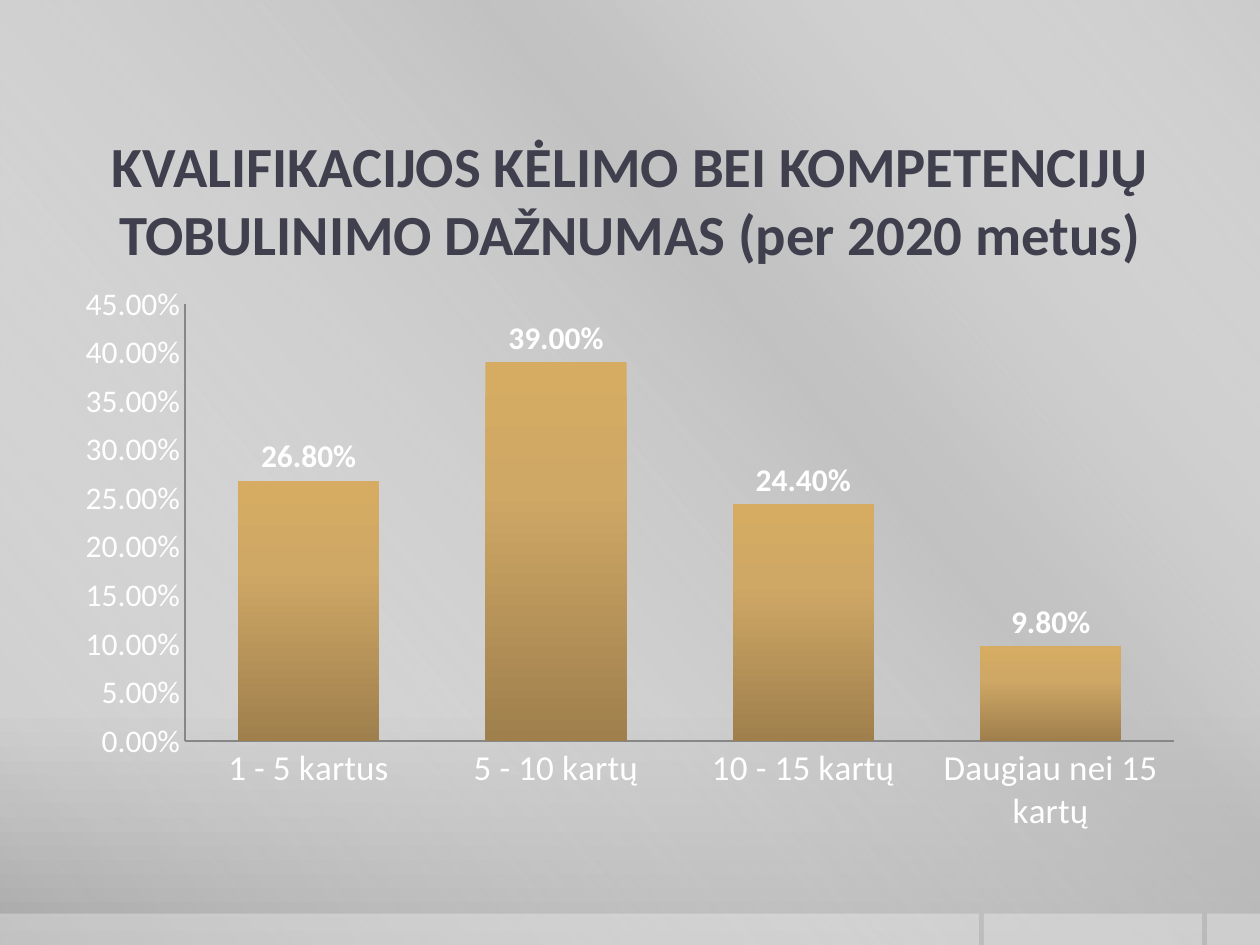
from lxml import etree
from pptx import Presentation
from pptx import util as u
from pptx.chart.data import CategoryChartData
from pptx.dml.color import RGBColor
from pptx.enum import chart as ch, shapes, text
from pptx.oxml.ns import qn

TITLE = "KVALIFIKACIJOS KĖLIMO BEI KOMPETENCIJŲ TOBULINIMO DAŽNUMAS (per 2020 metus)"
FREQUENCY = {
    "1 - 5 kartus": 0.268,
    "5 - 10 kartų": 0.39,
    "10 - 15 kartų": 0.244,
    "Daugiau nei 15 kartų": 0.098,
}
FONT = "Calibri"
PERCENT = "0.00%"

WHITE = RGBColor(0xFF, 0xFF, 0xFF)
SILVER = RGBColor(0xBF, 0xBF, 0xBF)
INK = RGBColor(0x3F, 0x3F, 0x4D)
AXIS = RGBColor(0x87, 0x87, 0x87)

# Gradient stops: position %, colour, opacity %
BACKDROP = [(0, RGBColor(0xCB, 0xCB, 0xCB), 100),
            (76, RGBColor(0xC8, 0xC8, 0xC8), 100),
            (100, RGBColor(0xA7, 0xA7, 0xA7), 100)]
SHEEN = [(0, WHITE, 0), (34, SILVER, 61), (38, SILVER, 76), (100, WHITE, 0)]
GOLD = [(0, RGBColor(0xD6, 0xAC, 0x62), 100),
        (34, RGBColor(0xCF, 0xA8, 0x66), 100),
        (100, RGBColor(0x9F, 0x7F, 0x4C), 100)]

WIDTH, HEIGHT = 10, 7.5
MARGIN = WIDTH / 20
CONTENT_WIDTH = WIDTH - 2 * MARGIN
FOOTER_TOP, FOOTER_GAP = 7.25, 0.04
FOOTER_WIDTHS = [7.77, 1.73, 0.42]


def add_color(parent, color, opacity):
    node = etree.SubElement(parent, qn("a:srgbClr"), val=str(color))
    if opacity < 100:
        etree.SubElement(node, qn("a:alpha"), val=str(opacity * 1000))


def paint_gradient(fill, owner, stops, angle):
    """Fill with stops; angle runs clockwise in degrees, owner holds the fill's XML."""
    fill.gradient()
    grad = next(owner.iter(qn("a:gradFill")))
    for child in list(grad):
        grad.remove(child)
    stop_list = etree.SubElement(grad, qn("a:gsLst"))
    for position, color, opacity in stops:
        stop = etree.SubElement(stop_list, qn("a:gs"), pos=str(position * 1000))
        add_color(stop, color, opacity)
    etree.SubElement(grad, qn("a:lin"), ang=str(angle * 60000), scaled="0")


def add_panel(slide, left, top, width, height):
    panel = slide.shapes.add_shape(shapes.MSO_SHAPE.RECTANGLE, u.Inches(left),
                                   u.Inches(top), u.Inches(width), u.Inches(height))
    panel.shadow.inherit = False
    panel.line.fill.background()
    return panel


def add_backdrop(slide):
    paint_gradient(slide.background.fill, slide.element, BACKDROP, 90)
    sheen = add_panel(slide, 0, 0, WIDTH, HEIGHT)
    paint_gradient(sheen.fill, sheen.element, SHEEN, 140)
    left = 0
    for width in FOOTER_WIDTHS:
        strip = add_panel(slide, left, FOOTER_TOP, width, HEIGHT - FOOTER_TOP)
        strip.fill.solid()
        solid = next(strip.element.iter(qn("a:solidFill")))
        add_color(solid, WHITE, 30)
        left += width + FOOTER_GAP


def add_title(slide):
    box = slide.shapes.add_textbox(u.Inches(MARGIN), u.Inches(1.08),
                                   u.Inches(CONTENT_WIDTH), u.Inches(1))
    frame = box.text_frame
    frame.word_wrap = True
    frame.vertical_anchor = text.MSO_ANCHOR.MIDDLE
    frame.margin_left = frame.margin_right = 0
    frame.text = TITLE
    heading = frame.paragraphs[0]
    heading.alignment = text.PP_ALIGN.CENTER
    style_font(heading.runs[0].font, 32.4, INK, True)


def style_font(font, size, color, bold=False):
    font.name, font.size, font.bold = FONT, u.Pt(size), bold
    font.color.rgb = color


def style_axis(axis, size):
    axis.has_major_gridlines = False
    axis.major_tick_mark = axis.minor_tick_mark = ch.XL_TICK_MARK.NONE
    axis.format.line.color.rgb = AXIS
    axis.format.line.width = u.Pt(0.75)
    style_font(axis.tick_labels.font, size, WHITE)


def add_frequency_chart(slide):
    data = CategoryChartData(number_format=PERCENT)
    data.categories = list(FREQUENCY)
    data.add_series("Series 1", FREQUENCY.values())
    chart = slide.shapes.add_chart(
        ch.XL_CHART_TYPE.COLUMN_CLUSTERED, u.Inches(MARGIN), u.Inches(2.17),
        u.Inches(CONTENT_WIDTH), u.Inches(4.53), data).chart
    chart.has_legend = chart.has_title = False
    style_font(chart.font, 18, WHITE)
    style_axis(chart.category_axis, 20)
    style_axis(chart.value_axis, 18)
    scale = chart.value_axis
    scale.minimum_scale, scale.maximum_scale, scale.major_unit = 0, 0.45, 0.05
    scale.tick_labels.number_format = PERCENT
    scale.tick_labels.number_format_is_linked = False

    plot = chart.plots[0]
    plot.gap_width = 75
    plot.vary_by_categories = False
    bars = plot.series[0]
    paint_gradient(bars.format.fill, bars._element, GOLD, 90)
    labels = bars.data_labels
    labels.show_value = True
    labels.number_format = PERCENT
    labels.number_format_is_linked = False
    labels.position = ch.XL_LABEL_POSITION.OUTSIDE_END
    style_font(labels.font, 18, WHITE, True)


def main():
    deck = Presentation()
    deck.slide_width, deck.slide_height = u.Inches(WIDTH), u.Inches(HEIGHT)
    slide = deck.slides.add_slide(deck.slide_layouts[6])
    add_backdrop(slide)
    add_title(slide)
    add_frequency_chart(slide)
    deck.save("out.pptx")


if __name__ == "__main__":
    main()
